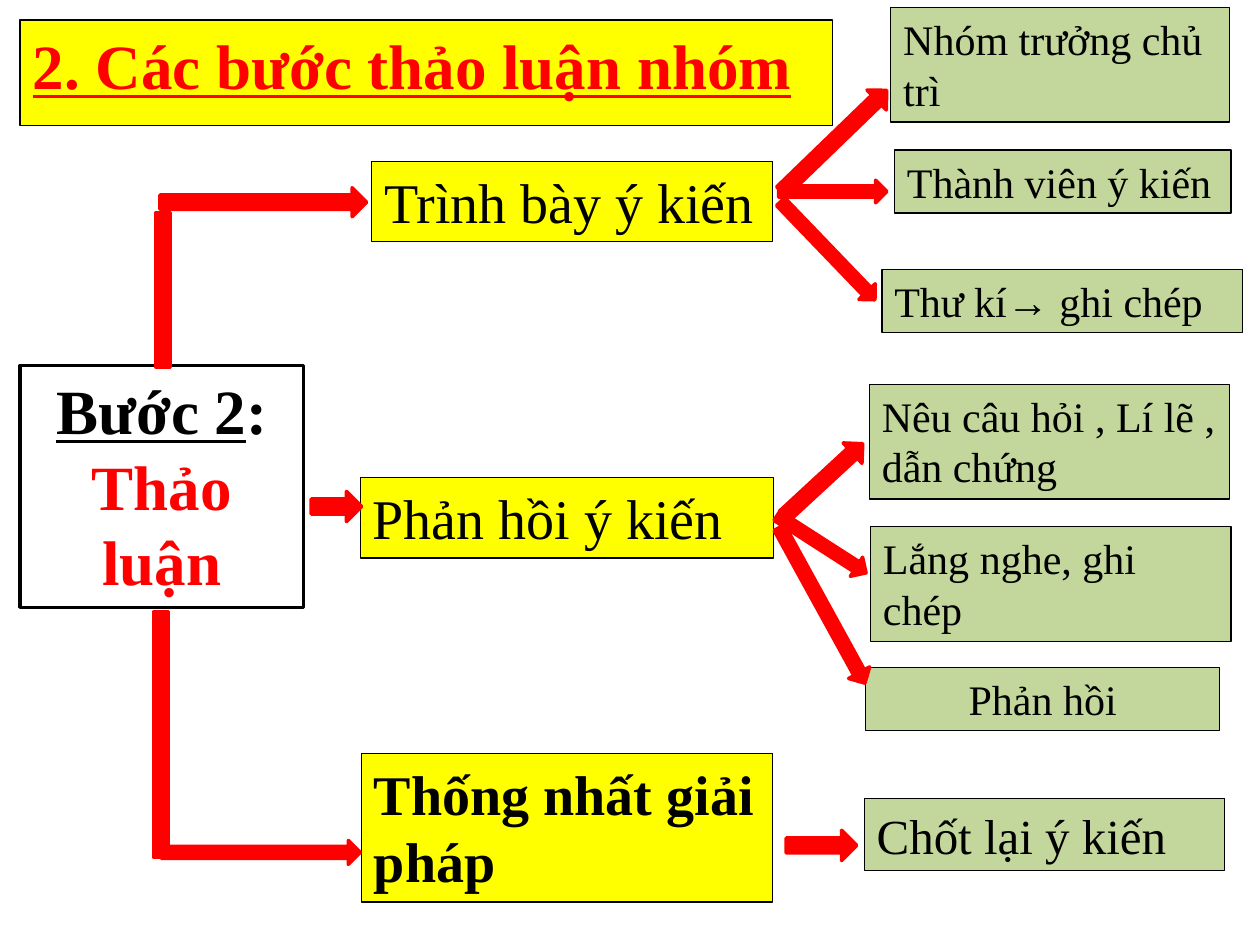
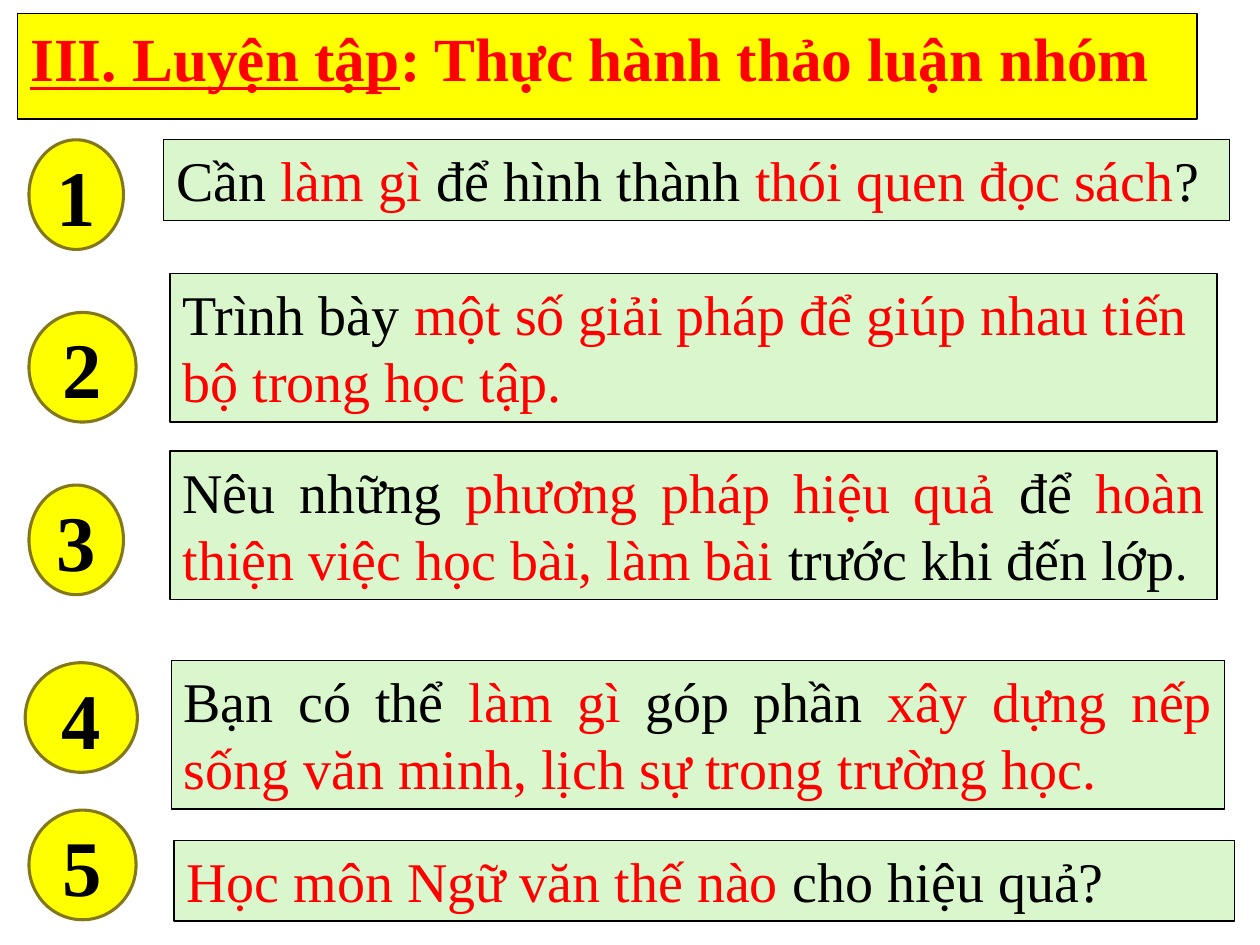
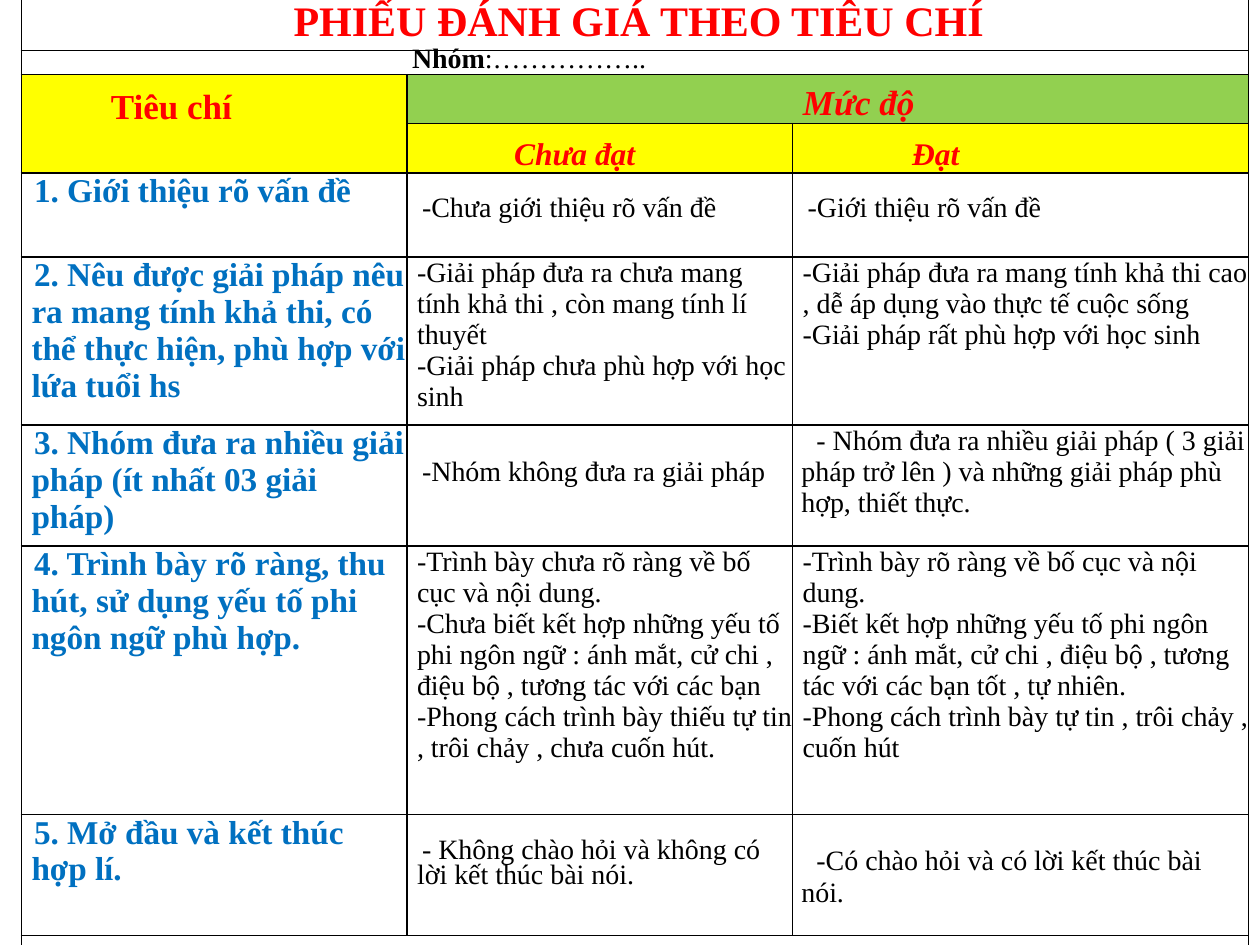
"""Builds three slides on group discussion: the steps, practice topics and an assessment sheet."""
from dataclasses import dataclass, replace

from lxml.etree import SubElement
from pptx import Presentation
from pptx.dml.color import RGBColor
from pptx.enum.shapes import MSO_SHAPE as Preset
from pptx.enum.text import MSO_ANCHOR as Anchor, MSO_AUTO_SIZE as AutoSize, PP_ALIGN as Align
from pptx.oxml.ns import qn
from pptx.util import Inches, Pt


@dataclass(frozen=True)
class Theme:
    font: str = "Times New Roman"
    black: str = "000000"
    white: str = "FFFFFF"
    red: str = "FF0000"
    blue: str = "0070C0"
    yellow: str = "FFFF00"
    olive: str = "837717"
    sage: str = "C3D69B"
    mint: str = "D9F6CD"
    green: str = "92D050"
    title: int = 36
    practice_title: int = 35
    number: int = 45
    body: int = 32
    result: int = 28
    detail: int = 24
    header: int = 20
    level: int = 18
    criterion: int = 19
    table: int = 16
    border: float = 0.75
    ring: float = 1.75
    heavy: float = 2
    grid: float = 1


THEME = Theme()


@dataclass(frozen=True)
class Look:
    size: int
    color: str = THEME.black
    bold: bool = False
    italic: bool = False
    underline: bool = False
    align: Align = Align.LEFT
    left: float = 0
    first: float = 0
    top: float = 0
    leading: float = 0
    fill: str = ""


BODY = Look(THEME.body)
DETAIL = Look(THEME.detail)
RED = replace(BODY, color=THEME.red)
TITLE = Look(THEME.title, THEME.red, bold=True)
PRACTICE = replace(TITLE, size=THEME.practice_title)


class Builder:
    def __init__(self, deck, theme):
        self.deck = deck
        self.theme = theme
        self.page = None

    def new_page(self, layout):
        self.page = self.deck.slides.add_slide(self.deck.slide_layouts.get_by_name(layout))

    def paint(self, shape, fill, line, width):
        shape.fill.solid()
        shape.fill.fore_color.rgb = RGBColor.from_string(fill)
        shape.line.color.rgb = RGBColor.from_string(line)
        shape.line.width = Pt(width)

    def add_spans(self, para, spans):
        look = spans[0][1]
        para.alignment = look.align
        if look.left or look.first:
            settings = para._p.get_or_add_pPr()
            settings.set("marL", str(Inches(look.left)))
            settings.set("indent", str(Inches(look.first)))
        if look.leading:
            para.line_spacing = Pt(look.leading)
        for text, style in spans:
            span = para.add_run()
            span.text = text
            font = span.font
            font.name = self.theme.font
            font.size = Pt(style.size)
            font.bold = style.bold
            font.italic = style.italic
            font.underline = style.underline
            font.color.rgb = RGBColor.from_string(style.color)

    def fill_box(self, box, spans, fill, width):
        self.paint(box, fill, self.theme.black, width)
        frame = box.text_frame
        frame.word_wrap = True
        frame.auto_size = AutoSize.SHAPE_TO_FIT_TEXT
        frame.vertical_anchor = Anchor.TOP
        self.add_spans(frame.paragraphs[0], spans)

    def title(self, place, spans):
        box = self.page.shapes.title
        box.left, box.top, box.width, box.height = map(Inches, place)
        self.fill_box(box, spans, self.theme.yellow, self.theme.border)

    def box(self, place, spans, fill, width=THEME.border):
        box = self.page.shapes.add_textbox(*map(Inches, place))
        self.fill_box(box, spans, fill, width)

    def preset(self, kind, place, fill, line, width, turn=0):
        shape = self.page.shapes.add_shape(kind, *map(Inches, place))
        shape.shadow.inherit = False
        shape.rotation = turn
        self.paint(shape, fill, line, width)
        return shape

    def arrow(self, place, turn=0, kind=Preset.RIGHT_ARROW):
        self.preset(kind, place, self.theme.red, self.theme.red, self.theme.heavy, turn)

    def badge(self, place, number):
        shape = self.preset(Preset.OVAL, place, self.theme.yellow, self.theme.olive, self.theme.ring)
        shape.text_frame.vertical_anchor = Anchor.MIDDLE
        look = Look(self.theme.number, bold=True, align=Align.CENTER)
        self.add_spans(shape.text_frame.paragraphs[0], [(str(number), look)])

    def table(self, left, top, columns, rows):
        frame = self.page.shapes.add_table(
            len(rows), len(columns), Inches(left), Inches(top),
            Inches(sum(columns)), Inches(sum(rows)))
        table = frame.table
        table.first_row = table.horz_banding = False
        for column, width in zip(table.columns, columns):
            column.width = Inches(width)
        for row, height in zip(table.rows, rows):
            row.height = Inches(height)
        for cell in table.iter_cells():
            cell.margin_left = cell.margin_right = cell.margin_top = cell.margin_bottom = 0
            self.outline(cell)
            cell.fill.background()
        return table

    def outline(self, cell):
        settings = cell._tc.get_or_add_tcPr()
        for side in ("a:lnL", "a:lnR", "a:lnT", "a:lnB"):
            edge = SubElement(settings, qn(side), w=str(Pt(self.theme.grid)))
            SubElement(SubElement(edge, qn("a:solidFill")), qn("a:srgbClr"), val=self.theme.black)

    def cell(self, cell, paragraphs):
        look = paragraphs[0][0][1]
        cell.margin_top = Inches(look.top)
        if look.fill:
            cell.fill.solid()
            cell.fill.fore_color.rgb = RGBColor.from_string(look.fill)
        for index, spans in enumerate(paragraphs):
            frame = cell.text_frame
            self.add_spans(frame.add_paragraph() if index else frame.paragraphs[0], spans)


def discussion_steps(builder):
    builder.new_page("Title Only")
    builder.title((0.16, 0.16, 6.45, 0.71),
                  [("2. Các bước thảo luận nhóm", replace(TITLE, underline=True))])
    step = Look(THEME.title, bold=True, align=Align.CENTER)
    builder.box((0.16, 2.9, 2.25, 1.92),
                [("Bước 2", replace(step, underline=True)), (": ", step),
                 ("Thảo luận", replace(step, color=THEME.red))],
                THEME.white, THEME.heavy)
    stages = [
        ((2.95, 1.28, 3.18, 0.64), "Trình bày ý kiến", BODY),
        ((2.86, 3.79, 3.28, 0.64), "Phản hồi ý kiến", BODY),
        ((2.87, 5.98, 3.26, 1.18), "Thống nhất giải pháp", replace(BODY, bold=True)),
    ]
    details = [
        ((7.07, 0.06, 2.69, 0.91), "Nhóm trưởng chủ trì", DETAIL),
        ((7.1, 1.19, 2.67, 0.5), "Thành viên ý kiến", DETAIL),
        ((7, 2.14, 2.86, 0.5), "Thư kí→ ghi chép", DETAIL),
        ((6.9, 3.05, 2.86, 0.91), "Nêu câu hỏi , Lí lẽ , dẫn chứng", DETAIL),
        ((6.91, 4.18, 2.86, 0.91), "Lắng nghe, ghi chép", DETAIL),
        ((6.87, 5.3, 2.81, 0.5), "Phản hồi", replace(DETAIL, align=Align.CENTER)),
        ((6.86, 6.34, 2.86, 0.57), "Chốt lại ý kiến", Look(THEME.result)),
    ]
    for fill, boxes in ((THEME.yellow, stages), (THEME.sage, details)):
        for place, text, look in boxes:
            builder.box(place, [(text, look)], fill)
    for stem in ((0.46, 2.06, 1.67, 0.48), (-0.05, 5.59, 2.66, 0.48)):
        builder.arrow(stem, 90, Preset.MATH_MINUS)
    arrows = [
        ((1.27, 1.49, 1.64, 0.23), 0),
        ((1.28, 6.67, 1.58, 0.19), 0),
        ((2.47, 3.9, 0.4, 0.24), 0),
        ((6.04, 1.01, 1.16, 0.22), 316),
        ((6.18, 1.43, 0.86, 0.18), 0),
        ((6.03, 1.9, 1.08, 0.18), 46.1),
        ((6.11, 3.7, 0.85, 0.22), 317.3),
        ((6.1, 4.23, 0.84, 0.18), 32.7),
        ((5.82, 4.71, 1.41, 0.19), 61.2),
        ((6.24, 6.59, 0.56, 0.24), 0),
    ]
    for place, turn in arrows:
        builder.arrow(place, turn)


def practice_topics(builder):
    builder.new_page("Title Only")
    builder.title((0.14, 0.11, 9.36, 0.69),
                  [("III. Luyện tập", replace(PRACTICE, underline=True)),
                   (": Thực hành thảo luận nhóm", PRACTICE)])
    justified = replace(BODY, align=Align.JUSTIFY)
    topics = [
        ((0.23, 1.11, 0.75, 0.87), (1.3, 1.11, 8.46, 0.64),
         [("Cần ", BODY), ("làm gì ", RED), ("để hình thành ", BODY),
          ("thói quen đọc sách", RED), ("?", BODY)]),
        ((0.23, 2.48, 0.85, 0.87), (1.35, 2.17, 8.31, 1.18),
         [("Trình bày ", BODY),
          ("một số giải pháp để giúp nhau tiến bộ trong học tập.", RED)]),
        ((0.23, 3.85, 0.75, 0.87), (1.35, 3.58, 8.31, 1.18),
         [("Nêu những ", justified), ("phương pháp hiệu quả ", RED), ("để ", BODY),
          ("hoàn thiện việc học bài, làm bài ", RED), ("trước khi đến lớp", BODY),
          (".", Look(THEME.result))]),
        ((0.2, 5.26, 0.89, 0.87), (1.36, 5.24, 8.36, 1.18),
         [("Bạn có thể ", justified), ("làm gì ", RED), ("góp phần ", BODY),
          ("xây dựng nếp sống văn minh, lịch sự trong trường học.", RED)]),
        ((0.23, 6.43, 0.85, 0.87), (1.38, 6.67, 8.42, 0.64),
         [("Học môn Ngữ văn thế nào ", replace(RED, align=Align.JUSTIFY)),
          ("cho hiệu quả?", BODY)]),
    ]
    for number, (badge, place, spans) in enumerate(topics, 1):
        builder.box(place, spans, THEME.mint)
        builder.badge(badge, number)


def assessment_sheet(builder):
    builder.new_page("Blank")
    table = builder.table(0.17, -0.02, [3.06, 3.06, 3.62],
                          [0.42, 0.19, 0.39, 0.39, 0.67, 1.33, 0.96, 2.13, 0.96, 0.21])
    merges = [((0, 0), (0, 2)), ((1, 0), (1, 2)), ((2, 0), (3, 0)),
              ((2, 1), (2, 2)), ((9, 0), (9, 2))]
    for start, end in merges:
        table.cell(*start).merge(table.cell(*end))

    heading = Look(THEME.detail, THEME.red, bold=True, left=2.16, top=0.19, leading=14)
    group = Look(THEME.table, bold=True, left=3.1, leading=13.8)
    criteria = replace(heading, size=THEME.header, left=0.71, top=0.21, leading=14.9,
                       fill=THEME.yellow)
    degree = replace(heading, size=THEME.header, italic=True, left=0.49,
                     align=Align.CENTER, fill=THEME.green)
    level = replace(heading, size=THEME.level, italic=True, left=0.85, fill=THEME.yellow)
    headers = [
        (0, 0, [("PHIẾU ĐÁNH GIÁ THEO TIÊU CHÍ", heading)]),
        (1, 0, [("Nhóm", group), (":……………..", replace(group, bold=False))]),
        (2, 0, [("Tiêu chí", criteria)]),
        (2, 1, [("Mức độ", degree)]),
        (3, 1, [("Chưa đạt", level)]),
        (3, 2, [("Đạt", replace(level, left=0.95))]),
    ]
    for row, column, spans in headers:
        builder.cell(table.cell(row, column), [spans])

    criterion = Look(THEME.criterion, THEME.blue, bold=True, left=0.08, first=0.02)
    plain = Look(THEME.table, left=0.08)
    short = replace(plain, left=0.12, top=0.2, leading=14.6)
    lowered = replace(plain, first=0.04, top=0.25)
    tight = replace(lowered, top=0.2, leading=14.6)
    indented = replace(plain, left=0.07, first=0.12)
    ratings = [
        ("1. Giới thiệu rõ vấn đề",
         short, ["-Chưa giới thiệu rõ vấn đề"],
         short, ["-Giới thiệu rõ vấn đề"]),
        ("2. Nêu được giải pháp nêu ra mang tính khả thi, có thể thực hiện, "
         "phù hợp với lứa tuổi hs",
         plain, ["-Giải pháp đưa ra chưa mang tính khả thi , còn mang tính lí thuyết",
                 "-Giải pháp chưa phù hợp với học sinh"],
         plain, ["-Giải pháp đưa ra mang tính khả thi cao , dễ áp dụng vào thực tế cuộc sống",
                 "-Giải pháp rất phù hợp với học sinh"]),
        ("3. Nhóm đưa ra nhiều giải pháp (ít nhất 03 giải pháp)",
         lowered, ["-Nhóm không đưa ra giải pháp"],
         indented, ["- Nhóm đưa ra nhiều giải pháp ( 3 giải pháp trở lên ) "
                    "và những giải pháp phù hợp, thiết thực."]),
        ("4. Trình bày rõ ràng, thu hút, sử dụng yếu tố phi ngôn ngữ phù hợp.",
         plain, ["-Trình bày chưa rõ ràng về bố cục và nội dung.",
                 "-Chưa biết kết hợp những yếu tố phi ngôn ngữ : ánh mắt, cử chi , "
                 "điệu bộ , tương tác với các bạn",
                 "-Phong cách trình bày thiếu tự tin , trôi chảy , chưa cuốn hút."],
         plain, ["-Trình bày rõ ràng về bố cục và nội dung.",
                 "-Biết kết hợp những yếu tố phi ngôn ngữ : ánh mắt, cử chi , "
                 "điệu bộ , tương tác với các bạn tốt , tự nhiên.",
                 "-Phong cách trình bày tự tin , trôi chảy , cuốn hút"]),
        ("5. Mở đầu và kết thúc hợp lí.",
         tight, ["- Không chào hỏi và không có lời kết thúc bài nói."],
         replace(indented, top=0.25), ["-Có chào hỏi và có lời kết thúc bài nói."]),
    ]
    for row, (name, low_look, low, high_look, high) in enumerate(ratings, 4):
        columns = [(criterion, [name]), (low_look, low), (high_look, high)]
        for column, (look, texts) in enumerate(columns):
            builder.cell(table.cell(row, column), [[(text, look)] for text in texts])


def main():
    deck = Presentation()
    deck.slide_width, deck.slide_height = Inches(10), Inches(7.5)
    builder = Builder(deck, THEME)
    discussion_steps(builder)
    practice_topics(builder)
    assessment_sheet(builder)
    deck.save("out.pptx")


if __name__ == "__main__":
    main()
